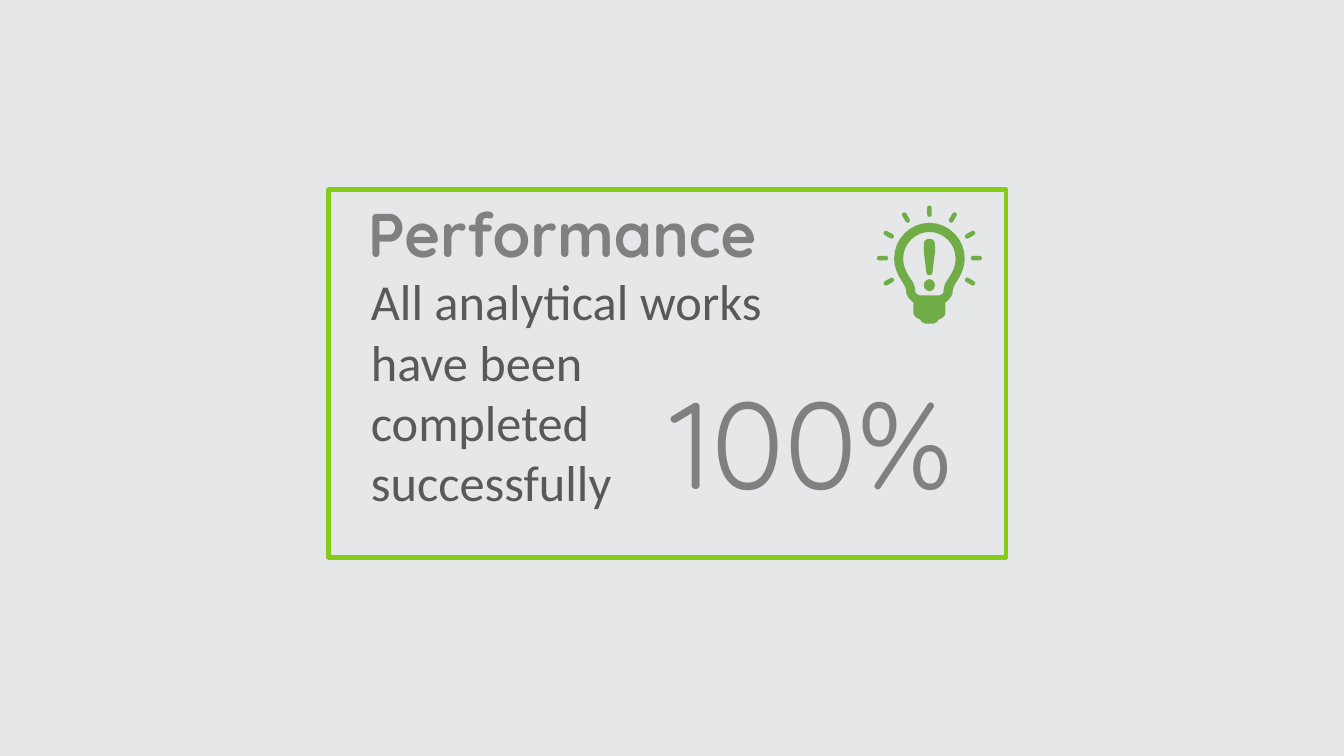
from math import cos, radians, sin

from pptx import Presentation
from pptx.dml.color import RGBColor
from pptx.enum.shapes import MSO_SHAPE
from pptx.enum.text import MSO_ANCHOR, MSO_AUTO_SIZE, PP_ALIGN
from pptx.util import Pt

RECT, ROUNDED, OVAL = MSO_SHAPE.RECTANGLE, MSO_SHAPE.ROUNDED_RECTANGLE, MSO_SHAPE.OVAL
TOP, LEFT, NO_FIT = MSO_ANCHOR.TOP, PP_ALIGN.LEFT, MSO_AUTO_SIZE.NONE
TITLE_ONLY = 5
rgb = RGBColor.from_string
GREY, DARK, LIME, GREEN, PAPER = "808080", "595959", "85CC18", "70AD47", "E6E7E9"


def put_text(sp, text, box, size, color, font, bold=False):
    """Place a text shape and format its only paragraph."""
    sp.left, sp.top, sp.width, sp.height = [Pt(v) for v in box]
    tf = sp.text_frame
    tf.word_wrap, tf.auto_size, tf.vertical_anchor = True, NO_FIT, TOP
    p = tf.paragraphs[0]
    p.alignment, p.space_after = LEFT, Pt(12)
    r = p.add_run()
    r.text = text
    r.font.size, r.font.name, r.font.bold = Pt(size), font, bold
    r.font.color.rgb = rgb(color)


def mirrored(start, curves, steps=8):
    """Sample Bezier curves of a right half and add the left half."""
    half = [start]
    for x1, y1, x2, y2, x3, y3 in curves:
        x0, y0 = half[-1]
        for i in range(1, steps + 1):
            t = i / steps
            a, b, c, d = (1 - t) ** 3, 3 * t * (1 - t) ** 2, 3 * t * t * (1 - t), t ** 3
            half.append((a * x0 + b * x1 + c * x2 + d * x3,
                         a * y0 + b * y1 + c * y2 + d * y3))
    return [(Pt(x), Pt(y)) for x, y in half + [(-x, y) for x, y in half[::-1]]]


prs = Presentation()
prs.slide_width, prs.slide_height = Pt(960), Pt(540)
s = prs.slides.add_slide(prs.slide_layouts[TITLE_ONLY])
s.background.fill.solid()
s.background.fill.fore_color.rgb = rgb(PAPER)

# Heading
put_text(s.shapes.title, "Performance", (255.6, 136.1, 361.4, 60.5), 44, GREY,
         "Quicksand", bold=True)

# Card frame
frame = s.shapes.add_shape(RECT, Pt(234.7), Pt(135.4), Pt(483.8), Pt(262.8))
frame.shadow.inherit = False
frame.fill.background()
frame.line.color.rgb = rgb(LIME)
frame.line.width = Pt(3)

# Statement and figure
for text, box, size, color, font in [
    ("All analytical works have been completed successfully",
     (257.8, 189.4, 293.8, 181.4), 36, DARK, "Calibri"),
    ("100%", (471.6, 257.8, 258.5, 113.8), 88, GREY, "Quicksand"),
]:
    put_text(s.shapes.add_textbox(0, 0, 0, 0), text, box, size, color, font)

# Light bulb, drawn around the centre of its glass
CX, CY = 663.9, 184.4
bulb = s.shapes.add_group_shape().shapes

glass = mirrored((0, -25.2), [
    (13.7, -25.2, 25.2, -13.7, 25.2, 0),
    (25.2, 8.6, 20.9, 14.4, 18.7, 18),
    (17.3, 20.2, 16.6, 22.3, 16.6, 23.8),
    (16.6, 26.6, 14.4, 29.5, 11.5, 31.7),
    (11.5, 33.8, 11.5, 38.2, 11.5, 38.2),
    (11.5, 40.3, 10.8, 42.5, 6.5, 43.9),
    (5.8, 45.4, 5, 46.1, 4.3, 46.1),
    (3.6, 46.8, 2.9, 46.8, 2.9, 46.8),
])
hollow = mirrored((0, -18.7), [
    (10.1, -18.7, 18.7, -10.1, 18.7, 0),
    (18.7, 7.2, 15.8, 10.8, 13.7, 14.4),
    (11.5, 17.3, 10.1, 20.2, 10.1, 23.8),
    (10.1, 25.2, 8.6, 25.9, 7.2, 26.6),
])
stroke = mirrored((0, -13.7), [
    (2.6, -13.7, 4, -12.2, 4, -9.4),
    (4, -9.4, 4, -3.6, 4, -3.6),
    (4, -2.9, 3.6, -2.2, 3.6, -1.4),
    (3.6, -1.4, 2.2, 10.1, 2.2, 10.1),
    (2, 11.5, 1.4, 12.2, 0, 12.2),
])
for contours in ([glass, hollow], [stroke]):
    ff = bulb.build_freeform(*contours[0][0])
    ff.add_line_segments(contours[0][1:])
    for hole in contours[1:]:
        ff.move_to(*hole[0])
        ff.add_line_segments(hole[1:])
    ff.convert_to_shape(Pt(CX), Pt(CY))

# Dot of the exclamation mark
bulb.add_shape(OVAL, Pt(CX - 4), Pt(CY + 15), Pt(8), Pt(8.6))

# Rays every 30 degrees
RAY_W, RAY_H, RADIUS = 3.3, 8, 33.5
for angle in range(-120, 121, 30):
    x = CX + RADIUS * sin(radians(angle))
    y = CY - RADIUS * cos(radians(angle))
    ray = bulb.add_shape(ROUNDED, Pt(x - RAY_W / 2), Pt(y - RAY_H / 2), Pt(RAY_W), Pt(RAY_H))
    ray.adjustments[0] = 0.5
    ray.rotation = angle

for sp in bulb:
    sp.shadow.inherit = False
    sp.fill.solid()
    sp.fill.fore_color.rgb = rgb(GREEN)
    sp.line.fill.background()

prs.save("out.pptx")
